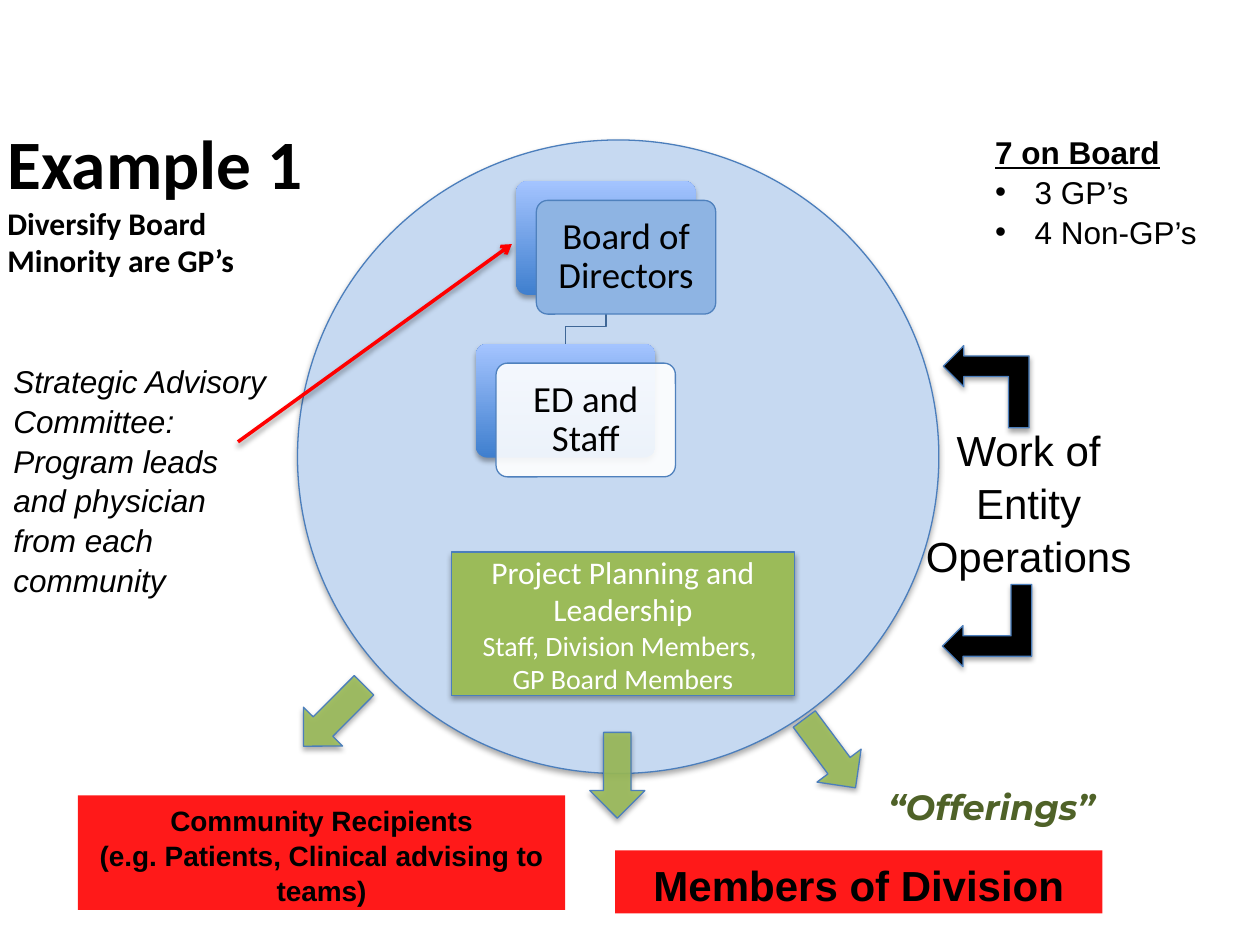
from copy import deepcopy

from lxml import etree
from pptx import Presentation
from pptx import util as u
from pptx.dml.color import RGBColor
from pptx.enum import shapes, text
from pptx.oxml import parse_xml
from pptx.oxml.ns import nsdecls, qn

Pt = u.Pt
SHAPE = shapes.MSO_SHAPE
LEFT, CENTER = text.PP_ALIGN.LEFT, text.PP_ALIGN.CENTER
TOP, MIDDLE = text.MSO_ANCHOR.TOP, text.MSO_ANCHOR.MIDDLE
COLORS = {
    "black": "000000", "white": "FFFFFF", "red": "FF0000",
    "circle": "C6D9F1", "outline": "4B7EBC", "link": "3F6797",
    "card": "8EB4E3", "card_line": "4F81BD",
    "card_low": "3F7FCE", "card_high": "A4C4FF",
    "green": "9BBB59", "dark_green": "4F6228",
}


def rgb(name):
    return RGBColor.from_string(COLORS[name])


class SlideBuilder:
    """Holds the slide and the style shared by its elements."""

    font = "Arial"
    arial_spacing = 1.05
    outline_width = 0.75

    def __init__(self, slide):
        self.slide = slide

    def place(self, shape, box):
        shape.left, shape.top, shape.width, shape.height = map(Pt, box)

    def shadow(self, shape, opacity=35):
        shape._element.spPr.append(parse_xml(
            f'<a:effectLst {nsdecls("a")}><a:outerShdw blurRad="{Pt(3.1)}" '
            f'dist="{Pt(1.8)}" dir="5400000" rotWithShape="0"><a:srgbClr val="000000">'
            f'<a:alpha val="{opacity * 1000}"/></a:srgbClr></a:outerShdw></a:effectLst>'))

    def outline(self, shape, color, width=outline_width):
        if color:
            shape.line.color.rgb = rgb(color)
            shape.line.width = Pt(width)
        else:
            shape.line.fill.background()

    def shape(self, kind, box, fill, line="outline", shadow=True, opacity=100, rotation=0):
        shape = self.slide.shapes.add_shape(kind, *map(Pt, box))
        shape.rotation = rotation
        shape.fill.solid()
        shape.fill.fore_color.rgb = rgb(fill)
        if opacity < 100:
            color = shape._element.spPr.find(qn("a:solidFill"))[0]
            etree.SubElement(color, qn("a:alpha")).set("val", str(opacity * 1000))
        self.outline(shape, line)
        if shadow:
            self.shadow(shape)
        else:
            shape.shadow.inherit = False
        return shape

    def set_text(self, shape, lines, sizes, font=font, color="black", bold=False,
                 italic=False, align=LEFT, anchor=TOP, spacing=None):
        frame = shape.text_frame
        frame.word_wrap = True
        frame.vertical_anchor = anchor
        frame.text = "\n".join(lines)
        if spacing is None:
            spacing = self.arial_spacing if font == "Arial" else 1.0
        for paragraph, size in zip(frame.paragraphs, sizes):
            paragraph.alignment = align
            paragraph.line_spacing = spacing
            paragraph.space_before = Pt(0)
            for run in paragraph.runs:
                run.font.name, run.font.size = font, Pt(size)
                run.font.bold, run.font.italic = bold, italic
                run.font.color.rgb = rgb(color)
        return frame

    def textbox(self, box, lines, sizes, **style):
        return self.set_text(self.slide.shapes.add_textbox(*map(Pt, box)),
                             lines, sizes, **style)

    def title(self, box, heading, details):
        title = self.slide.shapes.title
        self.place(title, box)
        frame = self.set_text(title, ["\v".join([heading, *details])], [18],
                              font="Calibri", bold=True, anchor=MIDDLE)
        paragraph = frame.paragraphs[0]
        paragraph.runs[0].font.size = Pt(39.6)
        # Line breaks take the size of the run before them
        for line_break in paragraph._p.findall(qn("a:br")):
            line_break.append(deepcopy(line_break.getprevious().find(qn("a:rPr"))))

    def bullet_list(self, box, heading, items):
        body = self.slide.placeholders[1]
        self.place(body, box)
        lines = [heading, *items]
        frame = self.set_text(body, lines, [18] * len(lines))
        for index, paragraph in enumerate(frame.paragraphs):
            props = paragraph._p.get_or_add_pPr()
            indent = Pt(22.5) if index else 0
            props.set("marL", str(indent))
            props.set("indent", str(-indent))
            if index:
                etree.SubElement(props, qn("a:buFont")).set("typeface", "Arial")
                etree.SubElement(props, qn("a:buChar")).set("char", "•")
            else:
                etree.SubElement(props, qn("a:buNone"))
                paragraph.runs[0].font.bold = True
                paragraph.runs[0].font.underline = True

    def card(self, left, top, label, fill, opacity=100):
        width, height = 102.5, 65
        back = self.shape(SHAPE.ROUNDED_RECTANGLE, (left, top, width, height), "card", line=None)
        back.fill.gradient()
        back.fill.gradient_angle = 90
        for stop, color in zip(back.fill.gradient_stops, ("card_low", "card_high")):
            stop.color.rgb = rgb(color)
        front = self.shape(SHAPE.ROUNDED_RECTANGLE, (left + 11.5, top + 11, width, height),
                           fill, "card_line", shadow=False, opacity=opacity)
        for layer in (back, front):
            layer.adjustments[0] = 0.1
        self.set_text(front, [label], [21], font="Calibri", align=CENTER,
                      anchor=MIDDLE, spacing=0.9)

    def polyline(self, points, color):
        points = [(Pt(x), Pt(y)) for x, y in points]
        builder = self.slide.shapes.build_freeform(*points[0])
        builder.add_line_segments(points[1:], close=False)
        line = builder.convert_to_shape()
        line.fill.background()
        line.shadow.inherit = False
        self.outline(line, color)

    def arrow_line(self, start, end, color, width):
        line = self.slide.shapes.add_connector(
            shapes.MSO_CONNECTOR.STRAIGHT, *map(Pt, (*start, *end)))
        self.outline(line, color, width)
        outline = line._element.spPr.find(qn("a:ln"))
        etree.SubElement(outline, qn("a:tailEnd")).set("type", "arrow")
        self.shadow(line, 38)


def main():
    deck = Presentation()
    deck.slide_width, deck.slide_height = Pt(720), Pt(540)
    page = SlideBuilder(deck.slides.add_slide(deck.slide_layouts[1]))

    # Entity circle with the board and staff cards
    page.shape(SHAPE.OVAL, (170, 80, 366.5, 362), "circle")
    page.polyline([(346.3, 168.5), (346.3, 186.5), (323.3, 186.5), (323.3, 196.5)], "link")
    page.card(295, 103.5, "Board of Directors", "card")
    page.card(272, 196.5, "ED and Staff", "white", opacity=90)

    # Headings and notes
    page.title((-3, 80.5, 204, 67.5), "Example 1", ["Diversify Board", "Minority are GP’s"])
    page.bullet_list((561.5, 71.5, 145, 72.5), "7 on Board", ["3 GP’s", "4 Non-GP’s"])
    page.textbox((517.5, 237.5, 140.5, 95), ["Work of Entity", "Operations"], [24, 24],
                 align=CENTER)
    offerings = page.textbox((500.5, 445.5, 143.5, 32), ["“Offerings”"], [20],
                             font="Montserrat", color="dark_green", bold=True, italic=True)
    offerings.word_wrap = False

    # Recipients
    recipients = [
        ((44.5, 454.5, 278.5, 65.5), 16,
         ["Community Recipients", "(e.g. Patients, Clinical advising to teams)"]),
        ((351.5, 486, 278.5, 36), 24, ["Members of Division"]),
    ]
    for box, size, lines in recipients:
        panel = page.shape(SHAPE.RECTANGLE, box, "red", line=None, shadow=False, opacity=90)
        page.set_text(panel, lines, [size] * len(lines), bold=True, align=CENTER)

    # Arrows out of the circle
    for left, top, rotation in ((175, 384.5, 44.8), (458.5, 406, 323.3), (337, 418.5, 0)):
        page.shape(SHAPE.DOWN_ARROW, (left, top, 31.5, 49), "green",
                   opacity=90, rotation=rotation)

    # Bent arrows from the operations label
    page.shape(SHAPE.BENT_UP_ARROW, (540, 196.5, 47, 49), "black", rotation=270)
    lower_bend = page.shape(SHAPE.BENT_UP_ARROW, (540.5, 332, 47, 51), "black", rotation=270)
    lower_bend._element.spPr.find(qn("a:xfrm")).set("flipH", "1")

    # Project planning
    planning = page.shape(SHAPE.RECTANGLE, (258, 315.5, 196, 82), "green")
    page.set_text(planning, ["Project Planning and Leadership", "Staff, Division Members, ",
                             "GP Board Members"], [18, 16, 16],
                  font="Calibri", color="white", align=CENTER, anchor=MIDDLE)

    # Advisory committee
    page.textbox((0.5, 202.5, 161.5, 160), [
        "Strategic Advisory Committee: Program leads and physician from each community"],
        [18], italic=True)
    page.arrow_line((136, 252.5), (292.5, 139.5), "red", 2)

    deck.save("out.pptx")


if __name__ == "__main__":
    main()
